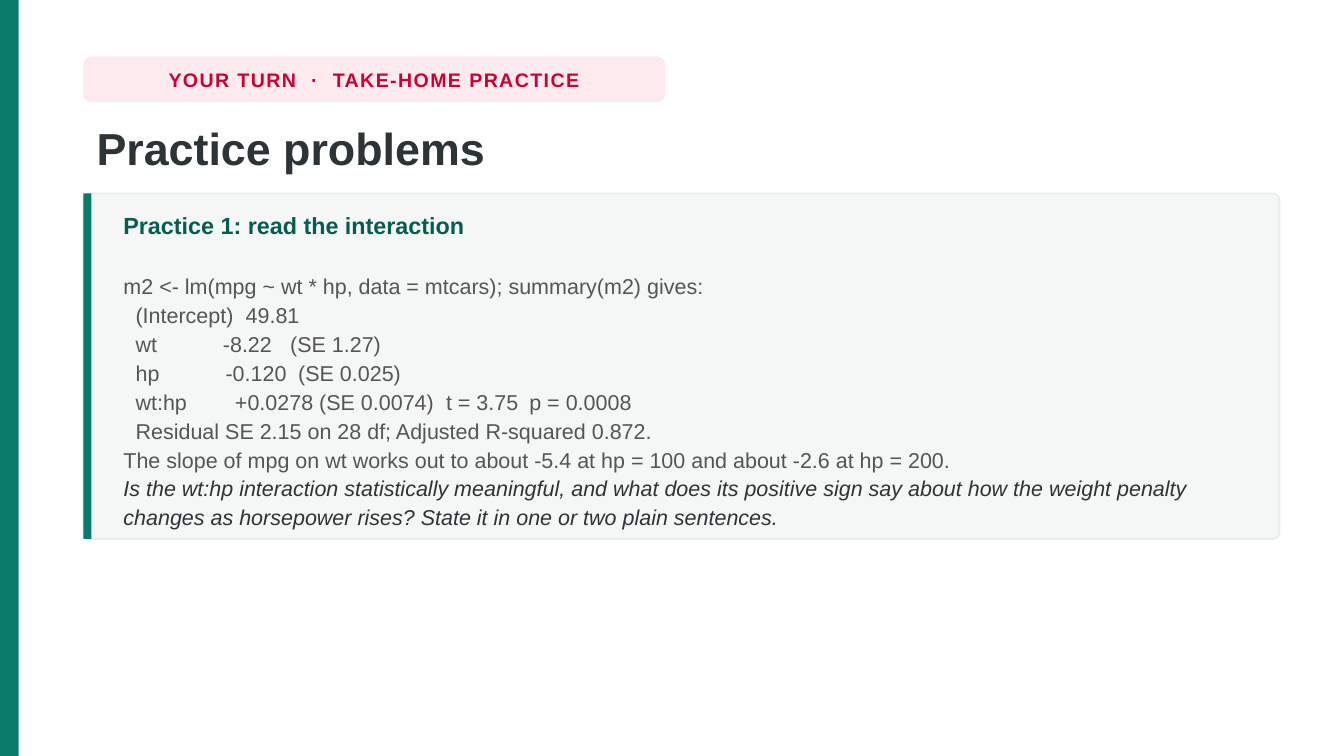
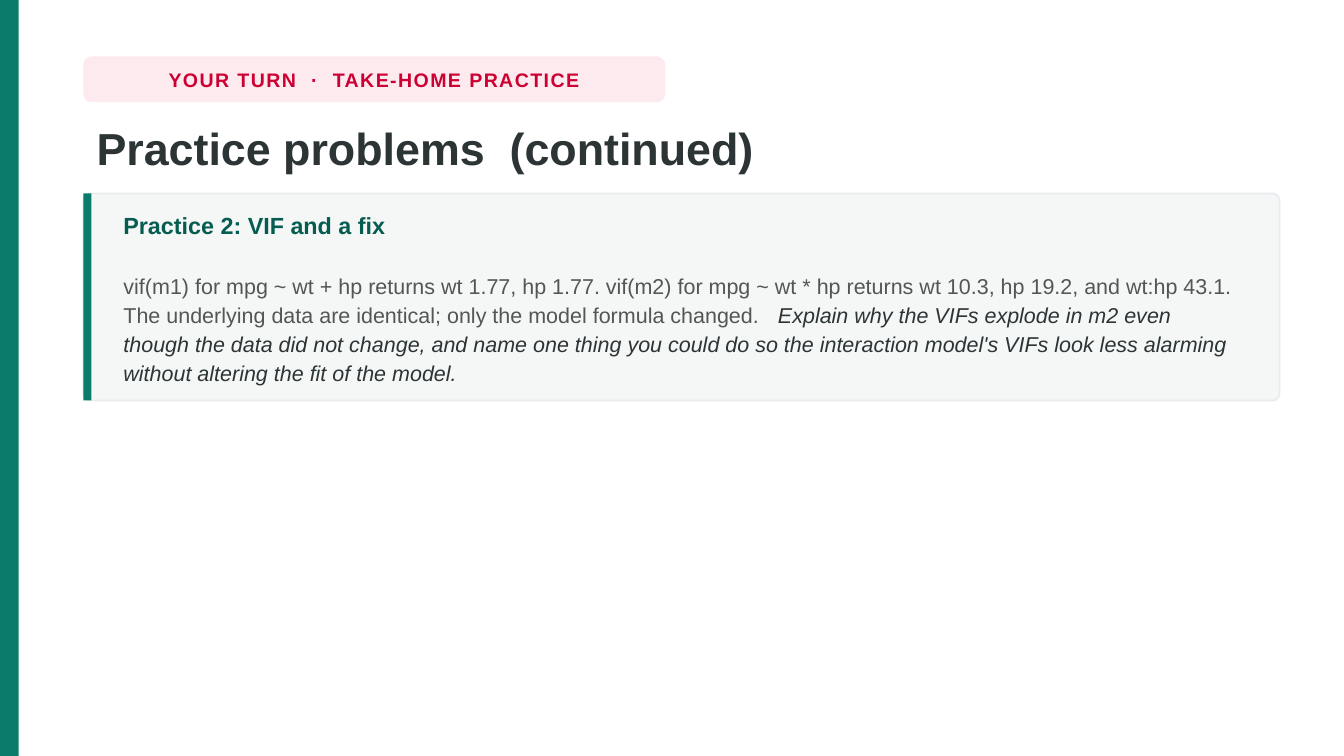
from dataclasses import dataclass

from lxml.etree import SubElement
from pptx import Presentation
from pptx.dml.color import RGBColor
from pptx.enum.shapes import MSO_SHAPE
from pptx.enum.text import MSO_ANCHOR, PP_ALIGN
from pptx.oxml.ns import qn
from pptx.util import Inches, Pt


@dataclass(frozen=True)
class Theme:
    font: str = "Arial"
    background: str = "FFFFFF"
    accent: str = "0B7B6B"
    heading: str = "065C50"
    ink: str = "2D3436"
    body: str = "555555"
    card: str = "F4F7F6"
    card_line: str = "E8ECEE"
    tag: str = "CC0033"
    tag_fill: str = "FDEAEF"
    title_size: float = 24
    heading_size: float = 12.5
    body_size: float = 11.5
    tag_size: float = 10.5
    title_spacing: float = 1.02
    card_spacing: float = 1.12
    heading_gap: float = 16.5


THEME = Theme()
SLIDE_WIDTH = 10
SLIDE_HEIGHT = SLIDE_WIDTH * 9 / 16
LEFT, CONTENT_WIDTH = 0.62, 8.9
TAG_BOX = (LEFT, 0.42, 4.33, 0.34)
TITLE_BOX = (LEFT, 0.84, CONTENT_WIDTH, 0.56)
CARD_TOP = 1.44
TAG_TEXT = "YOUR TURN  ·  TAKE-HOME PRACTICE"
CODE_INDENT = 0.09


@dataclass(frozen=True)
class Line:
    """One card paragraph: statement, then question, with tab stops in inches."""
    statement: str = ""
    question: str = ""
    stops: tuple = ()


PROBLEMS = [
    ("Practice problems", "Practice 1: read the interaction", 2.57, [
        Line("m2 <- lm(mpg ~ wt * hp, data = mtcars); summary(m2) gives:"),
        Line("\t(Intercept)\t49.81", stops=(CODE_INDENT, 0.91)),
        Line("\twt\t-8.22\t(SE 1.27)", stops=(CODE_INDENT, 0.74, 1.24)),
        Line("\thp\t-0.120\t(SE 0.025)", stops=(CODE_INDENT, 0.76, 1.3)),
        Line("\twt:hp\t+0.0278 (SE 0.0074)\tt = 3.75\tp = 0.0008",
             stops=(CODE_INDENT, 0.83, 2.4, 3.02)),
        Line("\tResidual SE 2.15 on 28 df; Adjusted R-squared 0.872.",
             stops=(CODE_INDENT,)),
        Line("The slope of mpg on wt works out to about -5.4 at hp = 100 "
             "and about -2.6 at hp = 200."),
        Line(question="Is the wt:hp interaction statistically meaningful, and what does "
             "its positive sign say about how the weight penalty changes as "
             "horsepower rises? State it in one or two plain sentences."),
    ]),
    ("Practice problems  (continued)", "Practice 2: VIF and a fix", 1.54, [
        Line("vif(m1) for mpg ~ wt + hp returns wt 1.77, hp 1.77. vif(m2) for "
             "mpg ~ wt * hp returns wt 10.3, hp 19.2, and wt:hp 43.1. The "
             "underlying data are identical; only the model formula changed.\t",
             "Explain why the VIFs explode in m2 even though the data did not "
             "change, and name one thing you could do so the interaction model's "
             "VIFs look less alarming without altering the fit of the model.",
             stops=(4.87,)),
    ]),
]


def color(value):
    return RGBColor.from_string(value)


def add_box(slide, box, fill, line=None, radius=None):
    kind = MSO_SHAPE.ROUNDED_RECTANGLE if radius else MSO_SHAPE.RECTANGLE
    shape = slide.shapes.add_shape(kind, *map(Inches, box))
    shape.shadow.inherit = False
    shape.fill.solid()
    shape.fill.fore_color.rgb = color(fill)
    if radius:
        shape.adjustments[0] = radius / box[3]
    if line:
        shape.line.color.rgb = color(line)
        shape.line.width = Pt(1)
    else:
        shape.line.fill.background()
    return shape


def add_text_frame(slide, box):
    frame = slide.shapes.add_textbox(*map(Inches, box)).text_frame
    frame.word_wrap = True
    return frame


def style_font(paragraph, size, ink, bold=False, italic=False):
    font = paragraph.font
    font.name = THEME.font
    font.size = Pt(size)
    font.color.rgb = color(ink)
    font.bold = bold
    font.italic = italic


def add_tab_stops(paragraph, stops):
    tab_list = SubElement(paragraph._p.get_or_add_pPr(), qn("a:tabLst"))
    for stop in stops:
        SubElement(tab_list, qn("a:tab"), pos=str(Inches(stop)), algn="l")


def add_tag(slide, box):
    add_box(slide, box, THEME.tag_fill, radius=0.06)
    frame = add_text_frame(slide, box)
    frame.word_wrap = False
    frame.vertical_anchor = MSO_ANCHOR.MIDDLE
    paragraph = frame.paragraphs[0]
    paragraph.alignment = PP_ALIGN.CENTER
    style_font(paragraph, THEME.tag_size, THEME.tag, bold=True)
    run = paragraph.add_run()
    run.text = TAG_TEXT
    run._r.get_or_add_rPr().set("spc", "80")


def add_title(slide, box, title):
    paragraph = add_text_frame(slide, box).paragraphs[0]
    paragraph.text = title
    paragraph.line_spacing = THEME.title_spacing
    style_font(paragraph, THEME.title_size, THEME.ink, bold=True)


def add_card_line(frame, line):
    paragraph = frame.add_paragraph()
    paragraph.line_spacing = THEME.card_spacing
    if line.stops:
        add_tab_stops(paragraph, line.stops)
    if line.statement:
        paragraph.add_run().text = line.statement
        style_font(paragraph, THEME.body_size, THEME.body)
    else:
        style_font(paragraph, THEME.body_size, THEME.ink, italic=True)
    if line.question:
        run = paragraph.add_run()
        run.text = line.question
        run.font.italic = True
        run.font.color.rgb = color(THEME.ink)


def add_card(slide, box, heading, lines):
    left, top, width, height = box
    add_box(slide, box, THEME.card, THEME.card_line, radius=0.05)
    add_box(slide, (left, top, 0.06, height), THEME.accent)
    frame = add_text_frame(slide, (left + 0.2, top + 0.08, width - 0.42, height - 0.16))
    frame.margin_top = Inches(0.03)
    paragraph = frame.paragraphs[0]
    paragraph.text = heading
    paragraph.line_spacing = THEME.card_spacing
    paragraph.space_after = Pt(THEME.heading_gap)
    style_font(paragraph, THEME.heading_size, THEME.heading, bold=True)
    for line in lines:
        add_card_line(frame, line)


def add_practice_slide(presentation, title, heading, card_height, lines):
    slide = presentation.slides.add_slide(presentation.slide_layouts[6])
    slide.background.fill.solid()
    slide.background.fill.fore_color.rgb = color(THEME.background)
    add_box(slide, (0, 0, 0.14, SLIDE_HEIGHT), THEME.accent)
    add_tag(slide, TAG_BOX)
    add_title(slide, TITLE_BOX, title)
    add_card(slide, (LEFT, CARD_TOP, CONTENT_WIDTH, card_height), heading, lines)


def main():
    presentation = Presentation()
    presentation.slide_width = Inches(SLIDE_WIDTH)
    presentation.slide_height = Inches(SLIDE_HEIGHT)
    for problem in PROBLEMS:
        add_practice_slide(presentation, *problem)
    presentation.save("out.pptx")


if __name__ == "__main__":
    main()
